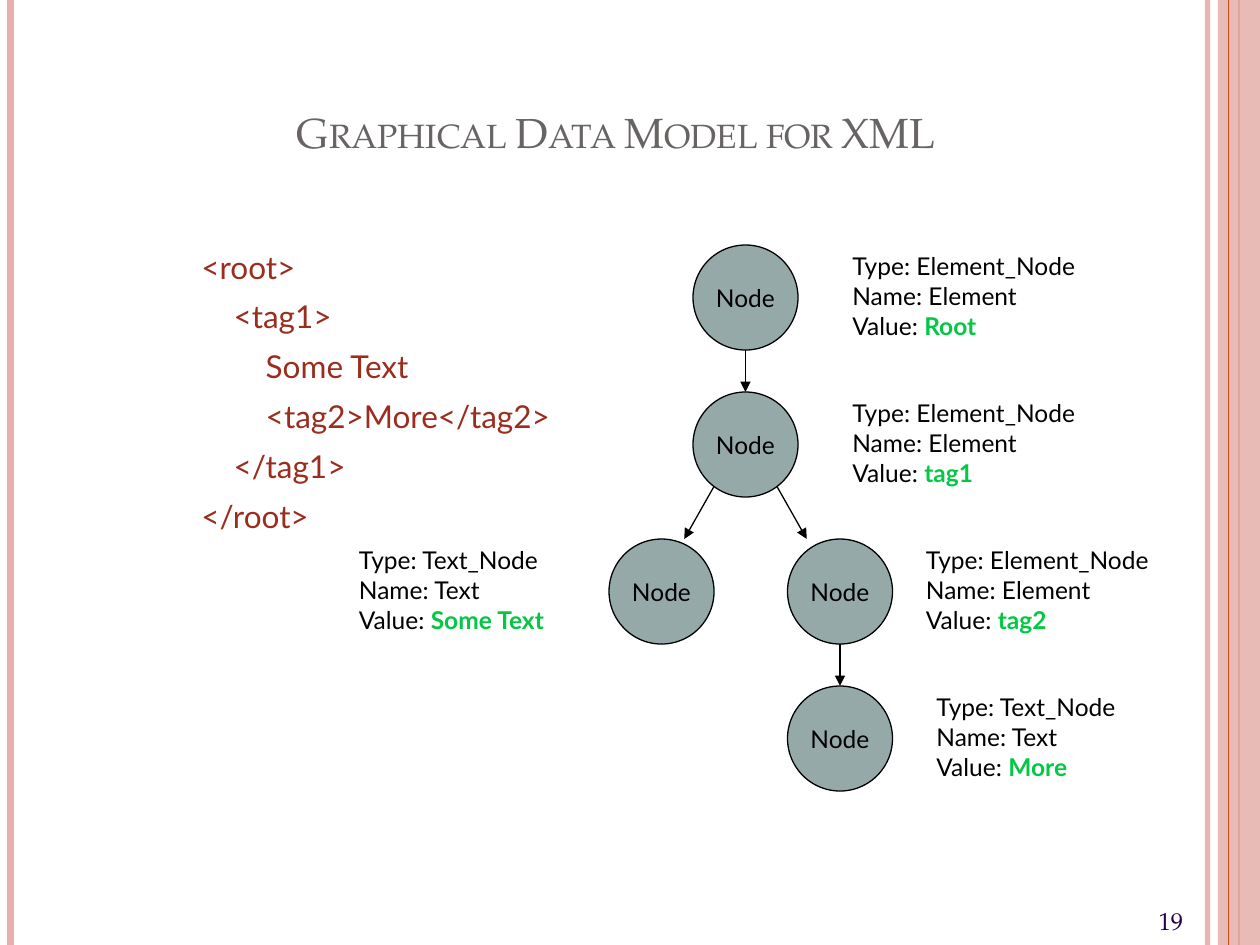
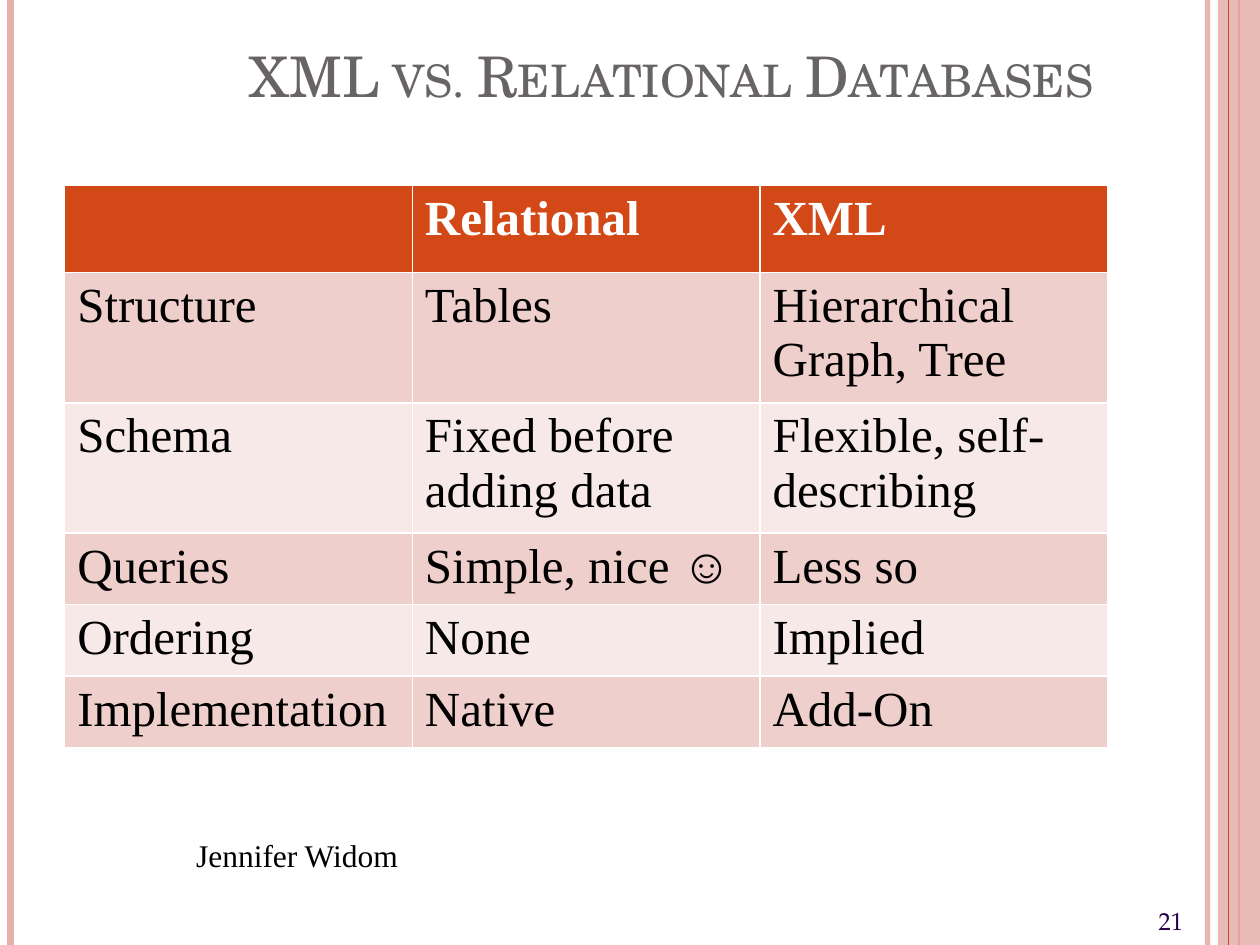
from lxml import etree
from pptx import Presentation
from pptx.dml.color import RGBColor
from pptx.enum import shapes, text
from pptx.oxml.ns import qn
from pptx.util import Pt

BLACK, WHITE = "000000", "FFFFFF"
PINK, ORANGE, GREEN = "E6B1AC", "D34817", "04C845"
SANS, PALATINO = "Lato", "TeX Gyre Pagella"
SCHOOLBOOK, TIMES = "TeX Gyre Schola", "Times New Roman"


def paint(fill, color, opacity=100):
    fill.solid()
    fill.fore_color.rgb = RGBColor.from_string(color)
    if opacity < 100:
        solid = fill._xPr.find(qn("a:solidFill"))
        etree.SubElement(solid[0], qn("a:alpha"), val=str(opacity * 1000))


def write(para, words, size=14, font=SANS, color=BLACK, bold=False, small_caps=False):
    for number, line in enumerate(words.split("\n")):
        if number:
            para.add_line_break()
        span = para.add_run()
        span.text = line
        span.font.size, span.font.name, span.font.bold = Pt(size), font, bold
        paint(span.font.fill, color)
        if small_caps:
            span.font._element.set("cap", "small")


deck = Presentation()
deck.slide_width, deck.slide_height = Pt(720), Pt(540)
layout = deck.slide_layouts.get_by_name("Title Only")
tree_page, table_page = pages = [deck.slides.add_slide(layout) for _ in range(2)]

# Side bands, drawn once and moved to the shared layout
bands = []
for x, color, width, opacity in [(690, PINK, 3, 93), (6, PINK, 4.5, 100),
                                 (708, ORANGE, 1.5, 100), (702, ORANGE, 0.75, 100)]:
    stripe = tree_page.shapes.add_connector(
        shapes.MSO_CONNECTOR.STRAIGHT, Pt(x), 0, Pt(x), Pt(540))
    stripe.line.width = Pt(width)
    paint(stripe.line.fill, color, opacity)
    bands.append(stripe)
panel = tree_page.shapes.add_shape(
    shapes.MSO_SHAPE.RECTANGLE, Pt(696), 0, Pt(24), Pt(540))
panel.shadow.inherit = False
panel.line.fill.background()
paint(panel.fill, PINK, 87)
bands.insert(3, panel)
for band in bands:
    layout.shapes._spTree.append(band._element)

# Titles and page numbers
for page, title, frame, size, font, number in [
        (tree_page, "Graphical Data Model for XML", (111, 49, 430.5, 44), 24, PALATINO, "19"),
        (table_page, "XML vs. Relational Databases", (36, 21.5, 596, 44), 32, SCHOOLBOOK, "21")]:
    box = page.shapes.title
    box.left, box.top, box.width, box.height = map(Pt, frame)
    box.text_frame.auto_size = text.MSO_AUTO_SIZE.NONE
    box.text_frame.vertical_anchor = text.MSO_ANCHOR.BOTTOM
    para = box.text_frame.paragraphs[0]
    para.alignment = text.PP_ALIGN.RIGHT
    write(para, title, size, font, "696464", small_caps=True)

    box = page.shapes.add_textbox(Pt(655), Pt(514), Pt(40), Pt(24))
    box.text_frame.vertical_anchor = text.MSO_ANCHOR.MIDDLE
    write(box.text_frame.paragraphs[0], number, 14, PALATINO, "280049")

# XML listing
code = """<root>
    <tag1>
        Some Text
        <tag2>More</tag2>
    </tag1>
</root>"""
box = tree_page.shapes.add_textbox(Pt(108), Pt(140.4), Pt(324), Pt(178))
box.text_frame.word_wrap = True
for number, line in enumerate(code.split("\n")):
    para = box.text_frame.paragraphs[0]
    if number:
        para = box.text_frame.add_paragraph()
        para.space_before = Pt(9)
    para.line_spacing = 0.9
    write(para, line, 18, color="9B2D1F")

# Tree nodes with their labels: level, node x, label x, type, value
TOP, LEVEL, NODE = 140, 84, 60
for level, x, label_x, kind, value in [
        (0, 396, 480, "Element", "Root"),
        (1, 396, 480, "Element", "tag1"),
        (2, 348, 198, "Text", "Some Text"),
        (2, 450, 522, "Element", "tag2"),
        (3, 450, 528, "Text", "More")]:
    y = TOP + level * LEVEL
    node = tree_page.shapes.add_shape(
        shapes.MSO_SHAPE.OVAL, Pt(x), Pt(y), Pt(NODE), Pt(NODE))
    node.shadow.inherit = False
    paint(node.fill, "96A9A9")
    paint(node.line.fill, BLACK)
    node.line.width = Pt(0.75)
    node.text_frame.word_wrap = False
    node.text_frame.vertical_anchor = text.MSO_ANCHOR.MIDDLE
    para = node.text_frame.paragraphs[0]
    para.alignment = text.PP_ALIGN.CENTER
    write(para, "Node")

    label = tree_page.shapes.add_textbox(Pt(label_x), Pt(y + 6), Pt(168), Pt(54))
    label.text_frame.word_wrap = True
    for number, line in enumerate([f"Type: {kind}_Node", f"Name: {kind}", "Value: "]):
        para = label.text_frame.paragraphs[0]
        if number:
            para = label.text_frame.add_paragraph()
            para.space_before = Pt(7)
        para.line_spacing = 0.6
        write(para, line)
    write(para, value, color=GREEN, bold=True)

# Arrows from parent to child
for ends in [(426, 200, 426, 224), (408, 278, 391, 308),
             (444, 278, 461, 308), (480, 368, 480, 392)]:
    arrow = tree_page.shapes.add_connector(
        shapes.MSO_CONNECTOR.STRAIGHT, *map(Pt, ends))
    arrow.line.width = Pt(0.75)
    paint(arrow.line.fill, BLACK)
    etree.SubElement(arrow.line._get_or_add_ln(), qn("a:tailEnd"), type="triangle")

# Comparison table
rows = [("", "Relational", "XML"),
        ("Structure", "Tables", "Hierarchical\nGraph, Tree"),
        ("Schema", "Fixed before adding data", "Flexible, self-describing"),
        ("Queries", "Simple, nice ☺", "Less so"),
        ("Ordering", "None", "Implied"),
        ("Implementation", "Native", "Add-On")]
heights = [50, 69.5, 69.5, 38, 38, 38]
table = table_page.shapes.add_table(
    len(rows), 3, Pt(37), Pt(105.8), Pt(596), Pt(sum(heights))).table
for r, (row, height) in enumerate(zip(rows, heights)):
    table.rows[r].height = Pt(height)
    for c, words in enumerate(row):
        cell = table.cell(r, c)
        paint(cell.fill, ORANGE if r == 0 else "EFCFCC" if r % 2 else "F7E9E8")
        if words:
            write(cell.text_frame.paragraphs[0], words, 28, TIMES,
                  BLACK if r else WHITE, bold=r == 0)

# Credit under the table
box = table_page.shapes.add_textbox(Pt(105), Pt(474), Pt(499), Pt(29))
box.text_frame.word_wrap = True
write(box.text_frame.paragraphs[0], "Jennifer Widom", 18, TIMES)

# Flat connectors
for holder in [layout, *pages]:
    for shape in holder.shapes:
        if shape.shape_type == shapes.MSO_SHAPE_TYPE.LINE:
            etree.SubElement(shape._element.spPr, qn("a:effectLst"))

deck.save("out.pptx")
